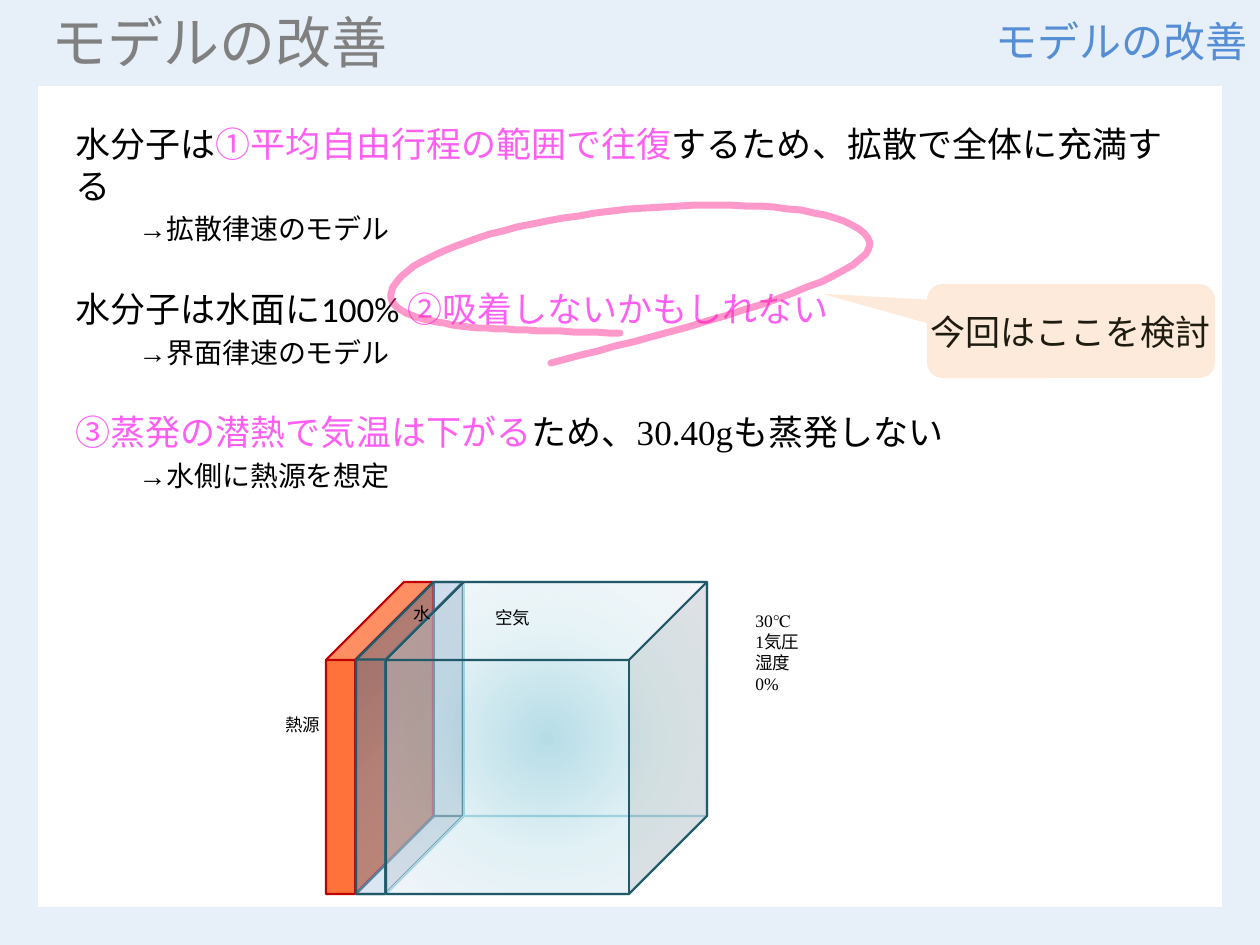
from lxml.etree import SubElement
from pptx import Presentation
from pptx.dml.color import RGBColor
from pptx.enum.shapes import MSO_SHAPE as Shape
from pptx.enum.text import MSO_ANCHOR as Anchor, MSO_AUTO_SIZE as AutoSize, PP_ALIGN as Align
from pptx.oxml import parse_xml
from pptx.oxml.ns import nsdecls, qn
from pptx.util import Emu, Pt

SCALE = 914400 / 126
PALE, PINK, BLACK, TEAL = "E7EFF9", "FD5FF2", "000000", "215968"
CJK = "Noto Sans CJK JP"
TOPICS = [
    ([("水分子は", "Calibri", BLACK), ("①平均自由行程の範囲で往復", CJK, PINK),
      ("するため、拡散で全体に充満する", "Arial", BLACK)], "→拡散律速のモデル"),
    ([("水分子は水面に100% ", "Calibri", BLACK), ("②吸着しないかもしれない", CJK, PINK)],
     "→界面律速のモデル"),
    ([("③蒸発の潜熱で気温は下がる", CJK, PINK), ("ため、", "Arial", BLACK),
      ("30.40g", "Times New Roman", BLACK), ("も蒸発しない", "Arial", BLACK)], "→水側に熱源を想定"),
]
WATER = [(0, "BACEE5"), (49, "93B7E4"), (100, "4F81BD")]
AIR = [(0, "4BACC6"), (50, "B7DEE8"), (100, "E1E8F5")]
WATER_DIRECTION = '<a:lin ang="13500000" scaled="0"/>'
AIR_DIRECTION = '<a:path path="circle"><a:fillToRect l="50000" t="50000" r="50000" b="50000"/></a:path>'
LOOP_START = (620, 333)
LOOP_CURVES = [
    [(523, 330), (436, 331), (401, 310)],
    [(367, 289), (422, 244), (547, 221)],
    [(670, 197), (844, 198), (868, 238)],
    [(891, 278), (663, 334), (551, 363)],
]


def px(length):
    """Turn px into EMU."""
    return Emu(round(length * SCALE))


def colour(value):
    """Turn a hex string into a colour."""
    return RGBColor.from_string(value)


def place(shape, box):
    """Move a shape to left, top, width, height."""
    shape.left, shape.top, shape.width, shape.height = map(px, box)


def add_span(para, text, size, font, tint):
    """Add one formatted run to a paragraph."""
    span = para.add_run()
    span.text = text
    span.font.size, span.font.name = Pt(size), font
    span.font.color.rgb = colour(tint)
    SubElement(span.font._element, qn("a:ea"), typeface=font)


def format_para(para, indent=0, before=0, align=Align.LEFT):
    """Set indent, spacing and alignment, without a bullet."""
    para.alignment, para.space_before = align, Pt(before)
    props = para._p.get_or_add_pPr()
    props.set("marL", str(px(indent)))
    props.set("indent", "0")
    SubElement(props, qn("a:buNone"))


def set_frame(shape, anchor=Anchor.MIDDLE, wrap=True):
    """Prepare a text frame and return it."""
    frame = shape.text_frame
    frame.auto_size, frame.word_wrap, frame.vertical_anchor = AutoSize.NONE, wrap, anchor
    return frame


def fill_heading(holder, box, text, size, tint, align):
    """Fill a placeholder with a one-line heading."""
    place(holder, box)
    para = set_frame(holder).paragraphs[0]
    format_para(para, align=align)
    add_span(para, text, size, "Calibri", tint)


def fill_topics(holder, box):
    """Fill the body with topics and the model each leads to."""
    place(holder, box)
    frame = set_frame(holder, Anchor.TOP)
    for number, (spans, model) in enumerate(TOPICS):
        para = frame.add_paragraph() if number else frame.paragraphs[0]
        format_para(para, before=24 if number else 0)
        for text, font, tint in spans:
            add_span(para, text, 20, font, tint)
        para = frame.add_paragraph()
        para.level = 1
        format_para(para, indent=63, before=3.2)
        add_span(para, model, 16, "Arial", BLACK)


def add_shape(shapes, kind, box, fill=None, line=None, adjust=(), turn=0):
    """Add a preset shape with a plain fill and outline."""
    shape = shapes.add_shape(kind, *map(px, box))
    shape.shadow.inherit = False
    shape.rotation = turn
    for index, value in enumerate(adjust):
        shape.adjustments[index] = value
    if fill:
        shape.fill.solid()
        shape.fill.fore_color.rgb = colour(fill)
    else:
        shape.fill.background()
    if line:
        shape.line.color.rgb, shape.line.width = colour(line), Pt(1.25)
    else:
        shape.line.fill.background()
    return shape


def set_gradient(shape, stops, direction):
    """Replace the empty fill by a gradient of 40 % opacity."""
    marks = "".join(
        f'<a:gs pos="{pos * 1000}"><a:srgbClr val="{tint}"><a:alpha val="40000"/></a:srgbClr></a:gs>'
        for pos, tint in stops)
    props = shape._element.spPr
    props.replace(props.find(qn("a:noFill")), parse_xml(
        f'<a:gradFill {nsdecls("a")}><a:gsLst>{marks}</a:gsLst>{direction}</a:gradFill>'))


def add_label(shapes, box, paras, wrap=False):
    """Add a small label from paragraphs of text and font pairs."""
    frame = set_frame(shapes.add_textbox(*map(px, box)), wrap=wrap)
    for number, spans in enumerate(paras):
        para = frame.add_paragraph() if number else frame.paragraphs[0]
        for text, font in spans:
            add_span(para, text, 10, font, BLACK)


def curve_points(start, curves, steps=24):
    """Give the points along a chain of cubic curves."""
    points = []
    for first, second, end in curves:
        for step in range(1, steps + 1):
            t = step / steps
            weights = ((1 - t) ** 3, 3 * t * (1 - t) ** 2, 3 * t * t * (1 - t), t ** 3)
            corners = (start, first, second, end)
            points.append(tuple(sum(w * c[axis] for w, c in zip(weights, corners)) for axis in (0, 1)))
        start = end
    return points


def add_loop(shapes):
    """Draw the translucent hand-drawn loop."""
    builder = shapes.build_freeform(*LOOP_START, scale=SCALE)
    builder.add_line_segments(curve_points(LOOP_START, LOOP_CURVES), close=False)
    loop = builder.convert_to_shape()
    loop.shadow.inherit = False
    loop.fill.background()
    loop.line.color.rgb, loop.line.width = colour("FF3399"), Pt(4)
    line = loop.line._get_or_add_ln()
    line.set("cap", "rnd")
    SubElement(line.find(".//" + qn("a:srgbClr")), qn("a:alpha"), val="50000")
    SubElement(line, qn("a:round"))


def add_backdrop(page):
    """Put the pale frame and heading band behind everything."""
    frame = add_shape(page.shapes, Shape.FRAME, (0, 0, 1260, 945), PALE, adjust=[0.04])
    band = add_shape(page.shapes, Shape.RECTANGLE, (0, 0, 1260, 86), PALE)
    for index, shape in enumerate((frame, band), 2):
        page.shapes._spTree.insert(index, shape._element)


def add_heat_source(shapes):
    """Draw the heat source and its label."""
    add_shape(shapes, Shape.CUBE, (326, 582, 107, 312), "FF733B", "C00000", [0.729])
    add_label(shapes, (273, 708, 60, 34), [[("熱源", "Arial")]])


def add_cell(shapes):
    """Draw the water layer, the air space and their labels."""
    water, air = (356, 582, 107, 312), (386, 582, 321, 312)
    add_shape(shapes, Shape.CUBE, water, line=TEAL, adjust=[0.729], turn=180)
    front = add_shape(shapes, Shape.CUBE, water, line=TEAL, adjust=[0.726])
    set_gradient(front, WATER, WATER_DIRECTION)
    add_shape(shapes, Shape.CUBE, air, line="93CDDD", turn=180)
    front = add_shape(shapes, Shape.CUBE, air, line=TEAL)
    set_gradient(front, AIR, AIR_DIRECTION)
    add_label(shapes, (483, 601, 60, 34), [[("空気", "Calibri")]])
    add_label(shapes, (743, 614, 85, 77), [
        [("30℃", "Times New Roman")],
        [("1", "Times New Roman"), ("気圧", "Calibri")],
        [("湿度 ", "Calibri"), ("0%", "Times New Roman")]], wrap=True)
    add_label(shapes, (401, 596, 43, 34), [[("水", "Arial")]])


def add_remark(shapes):
    """Mark the topic under study with a loop and a callout."""
    add_loop(shapes)
    callout = add_shape(shapes, Shape.ROUNDED_RECTANGULAR_CALLOUT, (927, 284, 288, 94),
                        "FDEADA", adjust=[-0.865, -0.397, 0.167])
    para = set_frame(callout, wrap=False).paragraphs[0]
    para.alignment = Align.CENTER
    add_span(para, "今回はここを検討", 20, "Calibri", "1E1C11")


def main():
    """Build the slide and save it."""
    deck = Presentation()
    deck.slide_width, deck.slide_height = px(1260), px(945)
    page = deck.slides.add_slide(deck.slide_layouts[3])
    title, body, corner = page.placeholders
    add_backdrop(page)
    fill_topics(body, (63, 116, 1134, 427))
    fill_heading(title, (39, 0, 1181, 82), "モデルの改善", 32, "808080", Align.LEFT)
    fill_heading(corner, (630, 0, 630, 82), "モデルの改善", 24, "558ED5", Align.RIGHT)
    for draw in (add_heat_source, add_cell, add_remark):
        draw(page.shapes.add_group_shape().shapes)
    deck.save("out.pptx")


if __name__ == "__main__":
    main()
